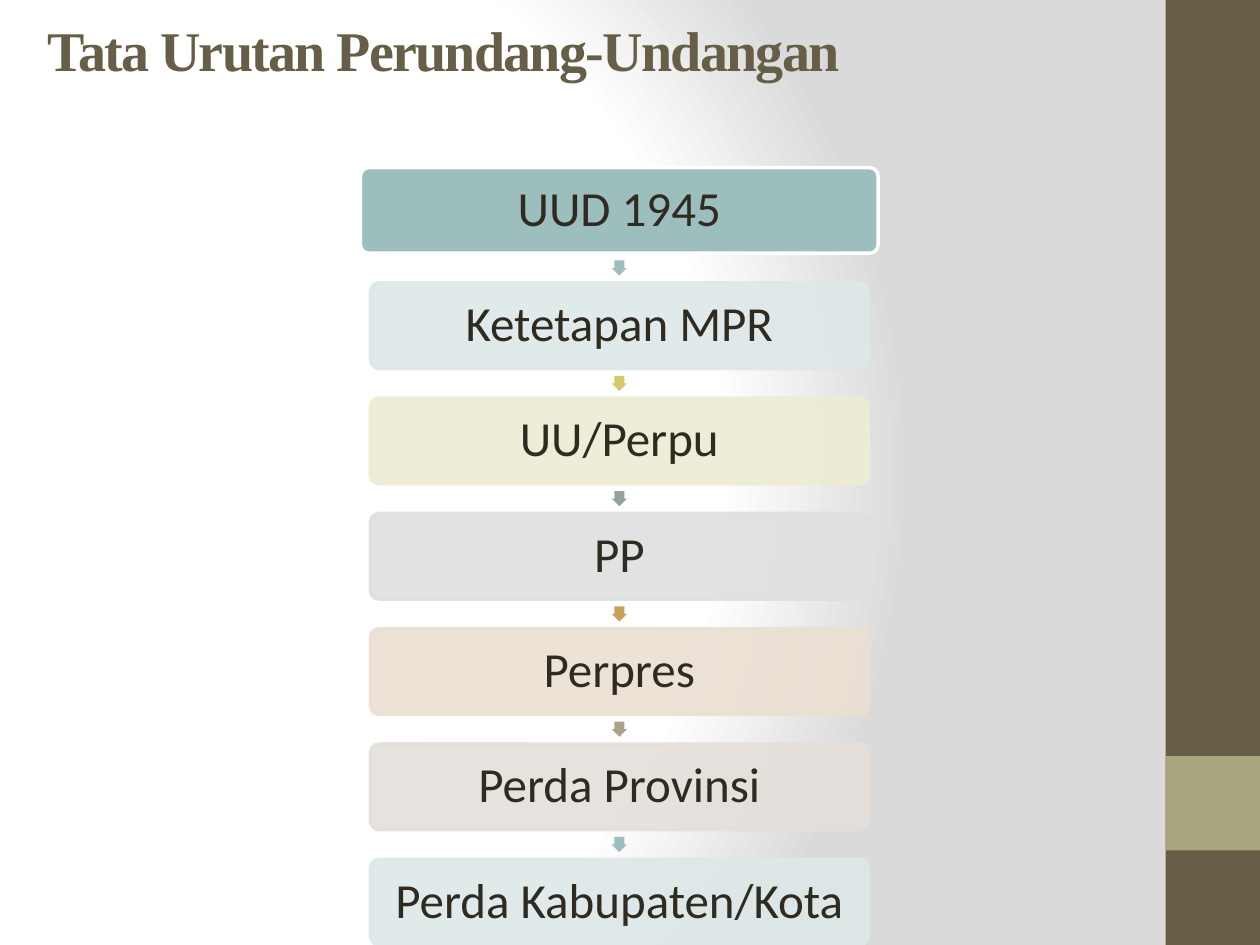
import pptx
import pptx.util
import pptx.dml.color
import pptx.enum.shapes
import pptx.enum.text
import pptx.oxml
import pptx.oxml.ns
from pptx.util import Inches

SHAPE = pptx.enum.shapes.MSO_SHAPE
ALIGN = pptx.enum.text.PP_ALIGN
MIDDLE = pptx.enum.text.MSO_ANCHOR.MIDDLE
BROWN, SAGE, TEXT = "675E47", "A9A57C", "2F2B20"

# label, fill, outline, opacity in percent
LEVELS = [
    ("UUD 1945", "9CBEBD", "FFFFFF", 100),
    ("Ketetapan MPR", "DEE8E8", "DEE8E8", 90),
    ("UU/Perpu", "EEECD4", "EEECD4", 90),
    ("PP", "DDE0DF", "DDE0DF", 90),
    ("Perpres", "EBDFD2", "EBDFD2", 90),
    ("Perda Provinsi", "E4DFDA", "E4DFDA", 90),
    ("Perda Kabupaten/Kota", "DEE8E8", "DEE8E8", 90),
]
ARROW_COLORS = ["9CBEBD", "D2CB6C", "95A39D", "C89F5D", "B1A089", "9CBEBD"]


def rgb(color):
    return pptx.dml.color.RGBColor.from_string(color)


def add_filled(s, kind, left, top, width, height, color):
    """Add a preset shape with a solid fill and neither outline nor shadow."""
    sp = s.shapes.add_shape(kind, Inches(left), Inches(top), Inches(width), Inches(height))
    sp.shadow.inherit = False
    sp.fill.solid()
    sp.fill.fore_color.rgb = rgb(color)
    sp.line.fill.background()
    return sp


def set_opacity(fill_parent, percent):
    for clr in fill_parent.iter(pptx.oxml.ns.qn("a:srgbClr")):
        alpha = clr.makeelement(pptx.oxml.ns.qn("a:alpha"), {"val": str(percent * 1000)})
        clr.append(alpha)


def set_background(s):
    """Give the slide a circular gradient from white to grey."""
    s.background.fill.gradient()
    old = next(s.element.iter(pptx.oxml.ns.qn("a:gradFill")))
    stops = "".join(
        f'<a:gs pos="{pos * 1000}"><a:srgbClr val="{color}"/></a:gs>'
        for pos, color in [(0, "FFFFFF"), (75, "FFFFFF"), (100, "DADADA")]
    )
    new = pptx.oxml.parse_xml(
        f'<a:gradFill {pptx.oxml.ns.nsdecls("a")} rotWithShape="1"><a:gsLst>{stops}</a:gsLst>'
        '<a:path path="circle"><a:fillToRect l="20000" t="50000" r="100000" b="50000"/></a:path>'
        "</a:gradFill>"
    )
    old.getparent().replace(old, new)


def add_side_band(s, left, top, width, height):
    add_filled(s, SHAPE.RECTANGLE, left, top, width, height, BROWN)
    add_filled(s, SHAPE.RECTANGLE, left, top + 0.8 * height, width, width, SAGE)


def set_title(s, left, top, width, height):
    sp = s.shapes.title
    sp.left, sp.top, sp.width, sp.height = map(Inches, (left, top, width, height))
    tf = sp.text_frame
    tf.text = "Tata Urutan Perundang-Undangan"
    tf.vertical_anchor = MIDDLE
    tf.auto_size = pptx.enum.text.MSO_AUTO_SIZE.NONE
    p = tf.paragraphs[0]
    p.alignment = ALIGN.LEFT
    r = p.runs[0]
    r.font.name, r.font.size, r.font.bold = "Times New Roman", pptx.util.Pt(32), True
    r.font.color.rgb = rgb(BROWN)
    r.font._element.set("spc", "-100")


def add_level(s, left, top, width, height, label, fill, outline, opacity):
    sp = add_filled(s, SHAPE.ROUNDED_RECTANGLE, left, top, width, height, fill)
    sp.adjustments[0] = 0.1
    sp.line.color.rgb = rgb(outline)
    sp.line.width = pptx.util.Pt(2)
    if opacity < 100:
        set_opacity(sp.element.spPr, opacity)
    tf = sp.text_frame
    tf.word_wrap = True
    tf.vertical_anchor = MIDDLE
    tf.margin_left = tf.margin_right = tf.margin_top = tf.margin_bottom = Inches(0.06)
    p = tf.paragraphs[0]
    p.text = label
    p.alignment = ALIGN.CENTER
    p.line_spacing = 0.9
    p.font.name, p.font.size = "Calibri", pptx.util.Pt(28)
    p.font.color.rgb = rgb(TEXT)


def add_hierarchy(s, left, top, width, height):
    """Stack the levels in the box, with a small down arrow in each gap."""
    box_h, arrow, inset = 0.68, 0.12, 0.08
    pitch = (height - box_h) / (len(LEVELS) - 1)
    for i, level in enumerate(LEVELS):
        y = top + i * pitch
        dx = inset if i else 0  # the first level is wider than the rest
        add_level(s, left + dx, y, width - 2 * dx, box_h, *level)
        if i < len(ARROW_COLORS):
            sp = add_filled(s, SHAPE.RIGHT_ARROW, left + (width - arrow) / 2,
                            y + (box_h + pitch - arrow) / 2, arrow, arrow, ARROW_COLORS[i])
            sp.rotation = 90
            sp.adjustments[0], sp.adjustments[1] = 0.667, 0.5


def main():
    prs = pptx.Presentation()
    prs.slide_width, prs.slide_height = Inches(10), Inches(7.5)
    s = prs.slides.add_slide(prs.slide_layouts[5])
    set_background(s)
    add_side_band(s, 9.25, 0, 0.75, 7.5)
    set_title(s, 0.28, 0, 8.83, 0.78)
    add_hierarchy(s, 2.86, 1.33, 4.11, 6.17)
    prs.save("out.pptx")


if __name__ == "__main__":
    main()
